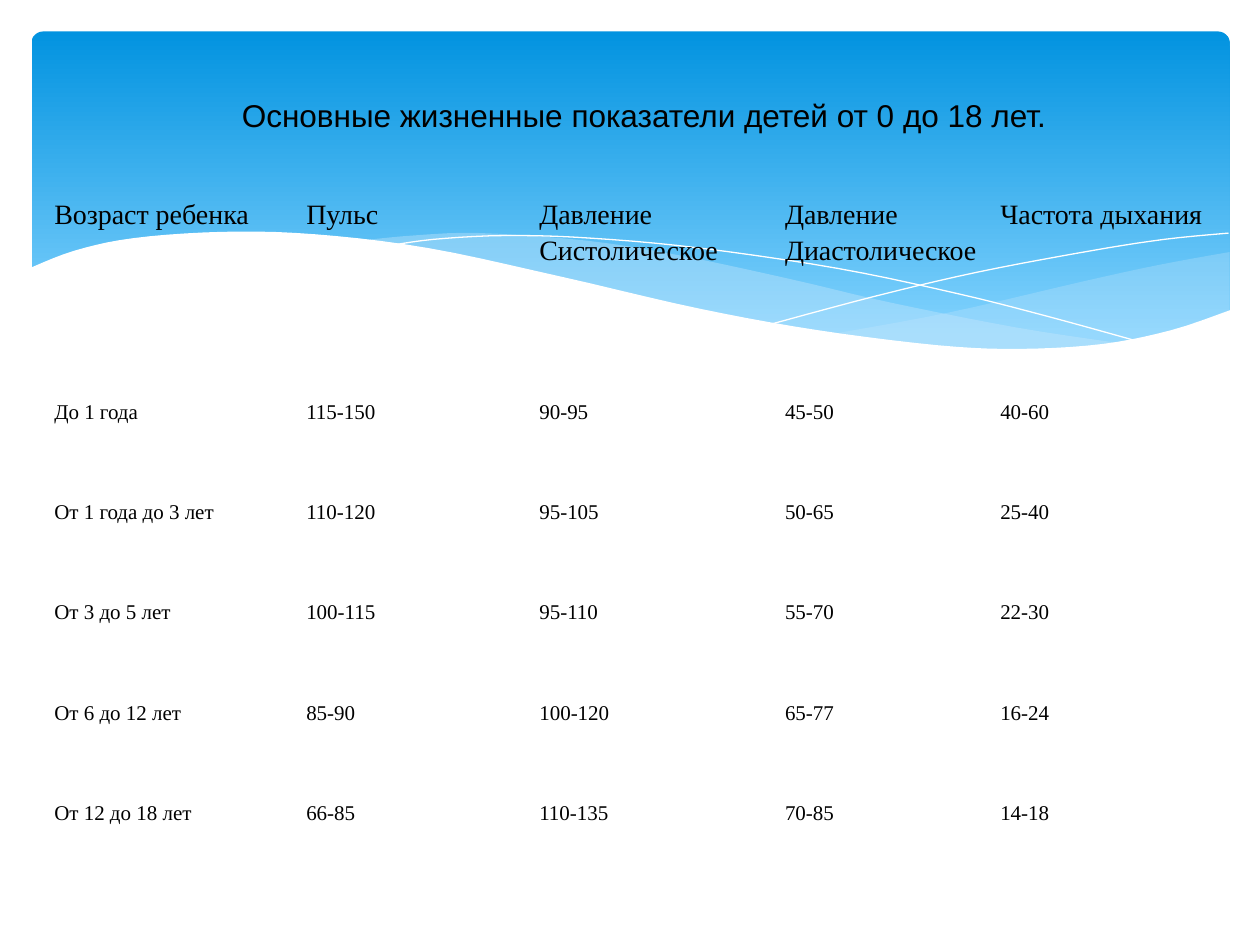
from dataclasses import dataclass

from lxml import etree
from pptx import Presentation
from pptx.dml.color import RGBColor
from pptx.enum import shapes, text
from pptx.oxml.ns import qn
from pptx.util import Pt

Point = tuple[float, float]


@dataclass(frozen=True)
class Theme:
    ink: str = "000000"
    white: str = "FFFFFF"
    veil: str = "C6E7FC"
    sky_top: str = "0293E0"
    sky_bottom: str = "83D3FE"
    title_font: str = "Arial"
    table_font: str = "Times New Roman"
    title_size: float = 18
    header_size: float = 16
    body_size: float = 12


@dataclass(frozen=True)
class Wave:
    """Smooth curves joined end to end; a wave without fill is an open white line."""
    curves: tuple[list[Point], ...]
    fill: str | None = None
    opacity: int = 100
    corners: tuple[Point, ...] = ()


THEME = Theme()
NO_GRID_STYLE = "{2D5ABB26-0587-4C30-8999-92F81FD0307C}"

WAVES = [
    Wave(([(702.7, 144), (663.1, 151.2), (619.9, 160.6), (542.2, 178.6), (475.9, 190.8)],
          [(475.9, 190.8), (527, 197.3), (578.2, 200.2), (634.3, 197.3), (673.2, 188.6),
           (702.7, 177.8)]),
         THEME.veil, 29),
    Wave(([(643, 196.6), (581, 187.2), (508.3, 172.8), (452.9, 159.8), (389.5, 146.2),
           (334.8, 137.5), (273.6, 133.2), (236.2, 134.6), (205.9, 137.5)],
          [(205.9, 137.5), (260.6, 146.2), (323.3, 159.8), (407.5, 178.6), (468, 190.1),
           (529.9, 198), (581, 200.2), (617, 199.4), (643, 196.6)]),
         THEME.veil, 40),
    Wave(([(222.5, 140.4), (247.7, 136.8), (288.7, 134.6), (337.7, 136.1), (400.3, 141.8),
           (478.8, 153.4), (547.2, 167.8), (598.3, 180.7), (653, 195.8)],)),
    Wave(([(441.4, 185), (500.4, 169.2), (558.7, 155.5), (623.5, 143.3), (665.3, 136.8),
           (702, 133.2)],)),
    Wave(([(16.6, 153.4), (42.5, 143.3), (76.3, 136.1), (127.4, 132.5), (180, 133.9),
           (244.8, 141.8), (321.8, 158.4), (399.6, 176.4), (466.6, 188.6), (535.7, 197.3),
           (582.5, 199.4), (630, 196.6), (669.6, 188.6), (703.4, 177.1)],),
         THEME.white, corners=((703.4, 236.9), (16.6, 236.9))),
]

COLUMN_WIDTHS = [144, 133.2, 140.4, 123, 123]
ROW_HEIGHTS = [115.2] + [57.4] * 5
VITAL_SIGNS = [
    ["Возраст ребенка", "Пульс", "Давление Систолическое", "Давление Диастолическое",
     "Частота дыхания"],
    ["До 1 года", "115-150", "90-95", "45-50", "40-60"],
    ["От 1 года до 3 лет", "110-120", "95-105", "50-65", "25-40"],
    ["От 3 до 5 лет", "100-115", "95-110", "55-70", "22-30"],
    ["От 6 до 12 лет", "85-90", "100-120", "65-77", "16-24"],
    ["От 12 до 18 лет", "66-85", "110-135", "70-85", "14-18"],
]


def color(value: str) -> RGBColor:
    return RGBColor.from_string(value)


def write(frame, words: str, *, font: str, size: float, line: float = 1,
          gap: float = 0, margins: tuple[float, float, float, float] = (0, 0, 0, 0)) -> None:
    """Put one left-aligned paragraph in a frame; margins run left, top, right, bottom."""
    (frame.margin_left, frame.margin_top,
     frame.margin_right, frame.margin_bottom) = map(Pt, margins)
    para = frame.paragraphs[0]
    para.alignment = text.PP_ALIGN.LEFT
    para.line_spacing = line
    para.space_before = para.space_after = Pt(gap)
    span = para.add_run()
    span.text = words
    span.font.name = font
    span.font.size = Pt(size)
    span.font.color.rgb = color(THEME.ink)


def smooth(knots: list[Point], steps: int = 5) -> list[Point]:
    """Sample a Catmull-Rom curve through the knots."""
    padded = [knots[0], *knots, knots[-1]]
    points = [knots[0]]
    for a, b, c, d in zip(padded, padded[1:], padded[2:], padded[3:]):
        for step in range(1, steps + 1):
            t = step / steps
            points.append(tuple(
                q + t / 2 * (r - p + t * (2 * p - 5 * q + 4 * r - s
                                          + t * (3 * (q - r) + s - p)))
                for p, q, r, s in zip(a, b, c, d)))
    return points


def draw_sky(page) -> None:
    sky = page.shapes.add_shape(shapes.MSO_SHAPE.ROUNDED_RECTANGLE,
                                Pt(18), Pt(18), Pt(684.7), Pt(194.4))
    sky.adjustments[0] = 0.034
    sky.shadow.inherit = False
    sky.line.fill.background()
    sky.fill.gradient()
    sky.fill.gradient_angle = 270
    stops = sky.fill.gradient_stops
    for stop, shade, position in zip(stops, (THEME.sky_top, THEME.sky_bottom), (0, 0.9)):
        stop.color.rgb = color(shade)
        stop.position = position


def draw_wave(page, wave: Wave) -> None:
    points = [point for curve in wave.curves for point in smooth(curve)]
    start, *rest = [(Pt(x), Pt(y)) for x, y in (*points, *wave.corners)]
    builder = page.shapes.build_freeform(*start)
    builder.add_line_segments(rest, close=wave.fill is not None)
    shape = builder.convert_to_shape()
    shape.shadow.inherit = False
    if wave.fill is None:
        shape.fill.background()
        shape.line.color.rgb = color(THEME.white)
        shape.line.width = Pt(0)
        return
    shape.line.fill.background()
    shape.fill.solid()
    shape.fill.fore_color.rgb = color(wave.fill)
    if wave.opacity < 100:
        tint = shape.element.spPr.find(qn("a:solidFill")).find(qn("a:srgbClr"))
        etree.SubElement(tint, qn("a:alpha")).set("val", str(wave.opacity * 1000))


def draw_table(page) -> None:
    holder = page.shapes.add_table(len(ROW_HEIGHTS), len(COLUMN_WIDTHS), Pt(31), Pt(111.6),
                                   Pt(sum(COLUMN_WIDTHS)), Pt(sum(ROW_HEIGHTS)))
    table = holder.table
    table.first_row = table.horz_banding = False
    next(holder.element.iter(qn("a:tableStyleId"))).text = NO_GRID_STYLE
    for column, width in zip(table.columns, COLUMN_WIDTHS):
        column.width = Pt(width)
    for index, (row, words) in enumerate(zip(table.rows, VITAL_SIGNS)):
        row.height = Pt(ROW_HEIGHTS[index])
        size = THEME.body_size if index else THEME.header_size
        for cell, word in zip(row.cells, words):
            cell.fill.background()
            cell.margin_left = cell.margin_right = cell.margin_top = cell.margin_bottom = 0
            write(cell.text_frame, word, font=THEME.table_font, size=size, line=1.15, gap=3.8)


def place_title(page) -> None:
    title = page.shapes.title
    title.left, title.top, title.width, title.height = map(Pt, (36, 50.4, 575.3, 51.1))
    frame = title.text_frame
    frame.word_wrap = False
    frame.vertical_anchor = text.MSO_ANCHOR.TOP
    write(frame, "Основные жизненные показатели детей от 0 до 18 лет.",
          font=THEME.title_font, size=THEME.title_size, margins=(102.2, 4.5, 0, 3.6))
    title.element.getparent().append(title.element)  # bring in front of the waves


def main() -> None:
    deck = Presentation()
    deck.slide_width, deck.slide_height = Pt(720), Pt(540)
    page = deck.slides.add_slide(deck.slide_layouts[5])
    page.background.fill.solid()
    page.background.fill.fore_color.rgb = color(THEME.white)
    draw_sky(page)
    for wave in WAVES:
        draw_wave(page, wave)
    draw_table(page)
    place_title(page)
    deck.save("out.pptx")


if __name__ == "__main__":
    main()
